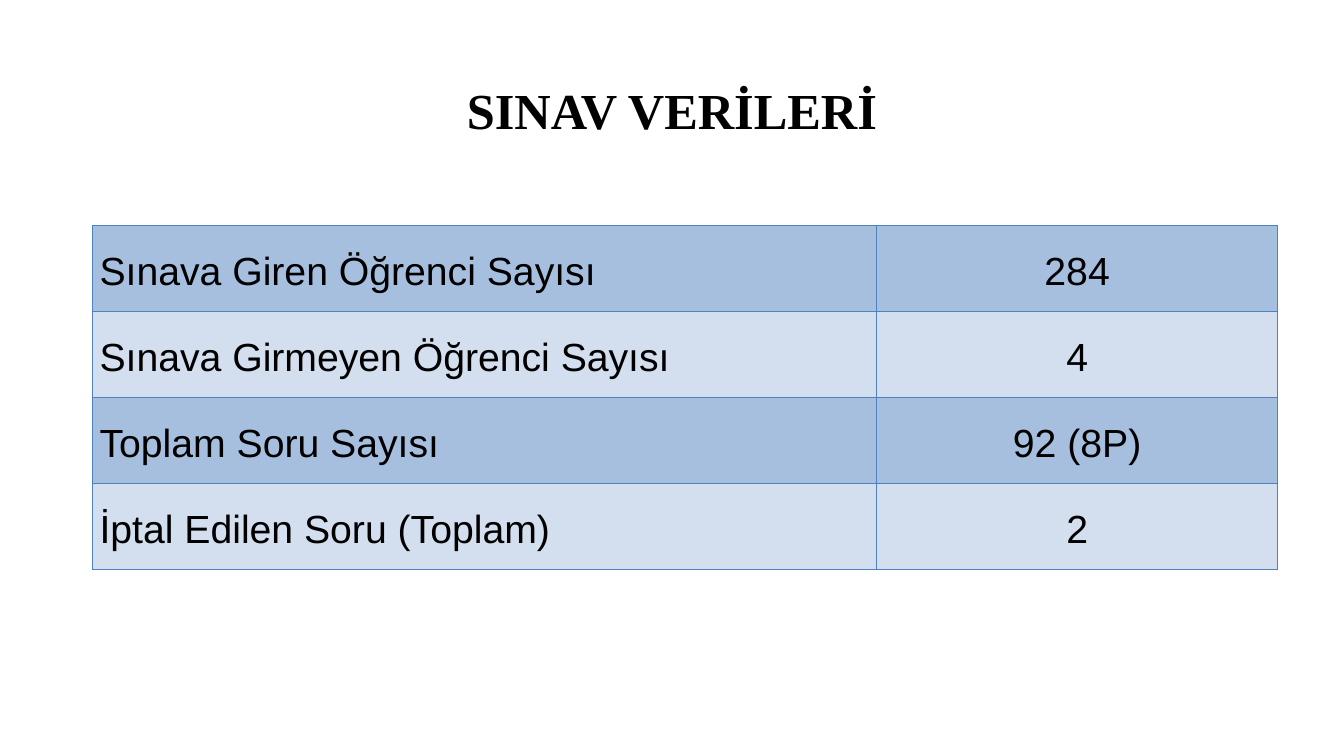
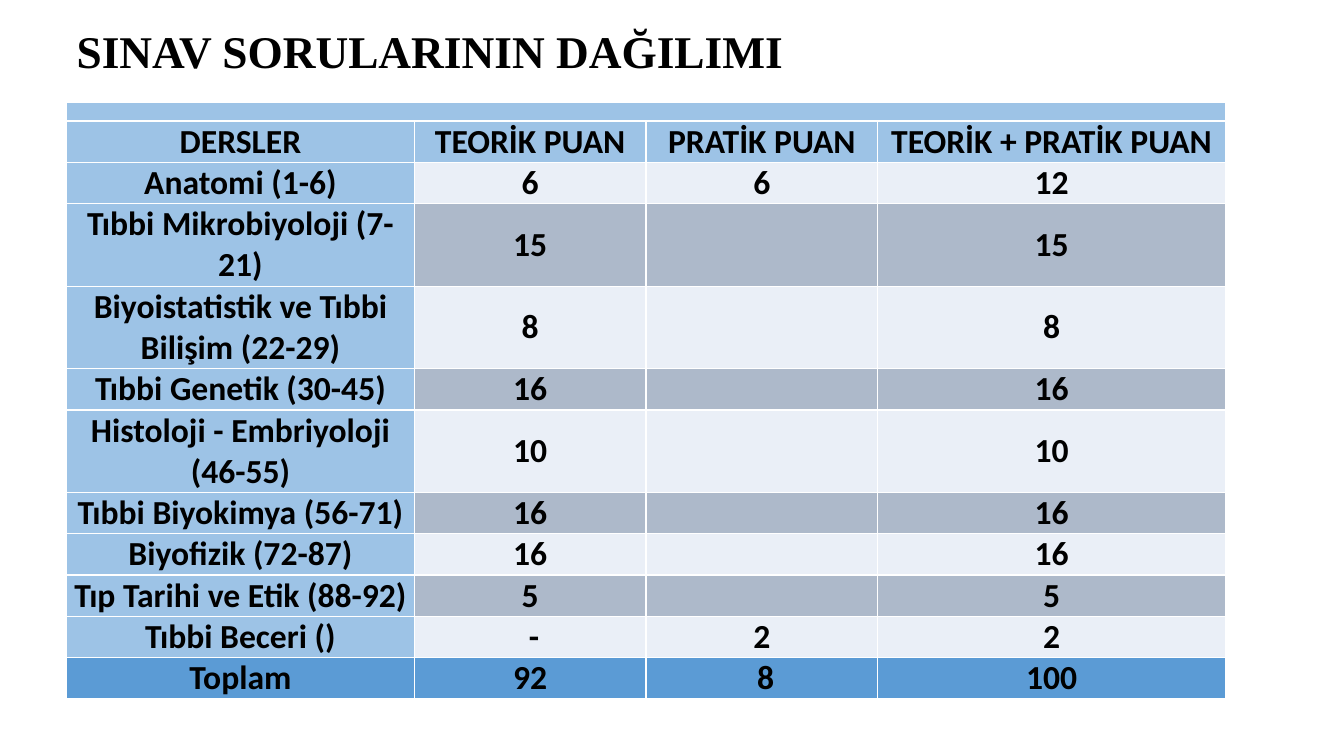
from dataclasses import dataclass

from lxml import etree
from pptx import Presentation
from pptx.dml.color import RGBColor
from pptx.enum.text import MSO_ANCHOR, PP_ALIGN
from pptx.oxml.ns import qn
from pptx.util import Cm, Pt

LEFT, CENTER = PP_ALIGN.LEFT, PP_ALIGN.CENTER
MIDDLE = MSO_ANCHOR.MIDDLE


@dataclass(frozen=True)
class Theme:
    ink: str = "000000"
    head: str = "9DC3E6"
    total: str = "5B9BD5"
    exam_rows: tuple = ("A7BFDE", "D3DFEE")
    score_rows: tuple = ("EAEFF7", "ADB9CA")
    exam_line: str = "4F81BD"
    score_line: str = "FFFFFF"
    title_font: str = "Times New Roman"
    exam_font: str = "Arial"
    score_font: str = "Calibri"
    exam_size: float = 28
    score_size: float = 24
    empty_size: float = 8


THEME = Theme()

EXAM = [
    ("Sınava Giren Öğrenci Sayısı", "284"),
    ("Sınava Girmeyen Öğrenci Sayısı", "4"),
    ("Toplam Soru Sayısı", "92 (8P)"),
    ("İptal Edilen Soru (Toplam)", "2"),
]
HEAD = ("DERSLER", "TEORİK PUAN", "PRATİK PUAN", "TEORİK + PRATİK PUAN")
# Course, theory, practice, sum, lines of text in the row
SCORES = [
    ("Anatomi (1-6)", "6", "6", "12", 1),
    ("Tıbbi Mikrobiyoloji (7-21)", "15", "", "15", 2),
    ("Biyoistatistik ve Tıbbi Bilişim (22-29)", "8", "", "8", 2),
    ("Tıbbi Genetik (30-45)", "16", "", "16", 1),
    ("Histoloji - Embriyoloji (46-55)", "10", "", "10", 2),
    ("Tıbbi Biyokimya (56-71)", "16", "", "16", 1),
    ("Biyofizik (72-87)", "16", "", "16", 1),
    ("Tıp Tarihi ve Etik (88-92)", "5", "", "5", 1),
    ("Tıbbi Beceri ()", " -", "2", "2", 1),
]
TOTAL = ("Toplam", "92", " 8", "100")


def style(para, font, size, bold, align, spacing):
    para.alignment = align
    para.line_spacing = spacing
    for run in para.runs:
        run.font.name = font
        run.font.size = Pt(size)
        run.font.bold = bold
        run.font.color.rgb = RGBColor.from_string(THEME.ink)


def add_title(slide, text, box, size, align):
    frame = slide.shapes.add_textbox(*map(Cm, box)).text_frame
    frame.word_wrap = True
    frame.vertical_anchor = MIDDLE
    frame.text = text
    style(frame.paragraphs[0], THEME.title_font, size, True, align, 0.9)


def add_edges(cell, color):
    props = cell._tc.get_or_add_tcPr()
    for side in ("lnL", "lnR", "lnT", "lnB"):
        line = etree.SubElement(props, qn(f"a:{side}"), w=str(Pt(1)))
        fill = etree.SubElement(line, qn("a:solidFill"))
        etree.SubElement(fill, qn("a:srgbClr"), val=color)


def add_grid(slide, spot, widths, heights, rows, fills, line, inset,
             font, size, bold, aligns, spacing):
    """Draw a table; fills holds one list of colours per row."""
    box = (*spot, sum(widths), sum(heights))
    table = slide.shapes.add_table(len(rows), len(widths), *map(Cm, box)).table
    table.first_row = table.horz_banding = False
    for col, width in zip(table.columns, widths):
        col.width = Cm(width)
    for r, (row, height) in enumerate(zip(rows, heights)):
        table.rows[r].height = Cm(height)
        for c, text in enumerate(row):
            cell = table.cell(r, c)
            add_edges(cell, line)
            cell.fill.solid()
            cell.fill.fore_color.rgb = RGBColor.from_string(fills[r][c])
            cell.margin_left = cell.margin_right = Cm(inset)
            cell.margin_top = cell.margin_bottom = 0
            cell.vertical_anchor = MIDDLE
            cell.text_frame.text = text
            para = cell.text_frame.paragraphs[0]
            style(para, font, size, bold, aligns[c], spacing)
            if not text:
                etree.SubElement(para._p, qn("a:endParaRPr"),
                                 sz=str(THEME.empty_size * 100))
    return table


def exam_slide(slide):
    add_title(slide, "SINAV VERİLERİ", (2.33, 1.01, 29.21, 3.68), 36, CENTER)
    fills = [[THEME.exam_rows[r % 2]] * 2 for r in range(len(EXAM))]
    add_grid(slide, (2.33, 5.68), (19.76, 10.11), [2.17] * len(EXAM), EXAM,
             fills, THEME.exam_line, 0.18, THEME.exam_font, THEME.exam_size,
             False, (LEFT, CENTER), 1.15)


def score_slide(slide):
    add_title(slide, "SINAV SORULARININ DAĞILIMI", (1.68, 0.58, 29.21, 1.55),
              32.4, LEFT)
    count, unit = len(HEAD), 1.04
    rows = [("",) * count, HEAD, *(s[:count] for s in SCORES), TOTAL]
    heights = [0.48, unit, *(unit * s[-1] for s in SCORES), unit]
    fills = [[THEME.head] * count] * 2
    for r in range(len(SCORES)):
        fills.append([THEME.head] + [THEME.score_rows[r % 2]] * (count - 1))
    fills.append([THEME.total] * count)
    table = add_grid(slide, (1.68, 2.57), (8.76, 5.84, 5.84, 8.76), heights,
                     rows, fills, THEME.score_line, 0, THEME.score_font,
                     THEME.score_size, True, [CENTER] * count, 1.0)
    table.cell(0, 0).merge(table.cell(0, count - 1))


def main():
    deck = Presentation()
    deck.slide_width, deck.slide_height = Cm(33.87), Cm(19.05)
    for build in (exam_slide, score_slide):
        build(deck.slides.add_slide(deck.slide_layouts[6]))
    deck.save("out.pptx")


if __name__ == "__main__":
    main()
